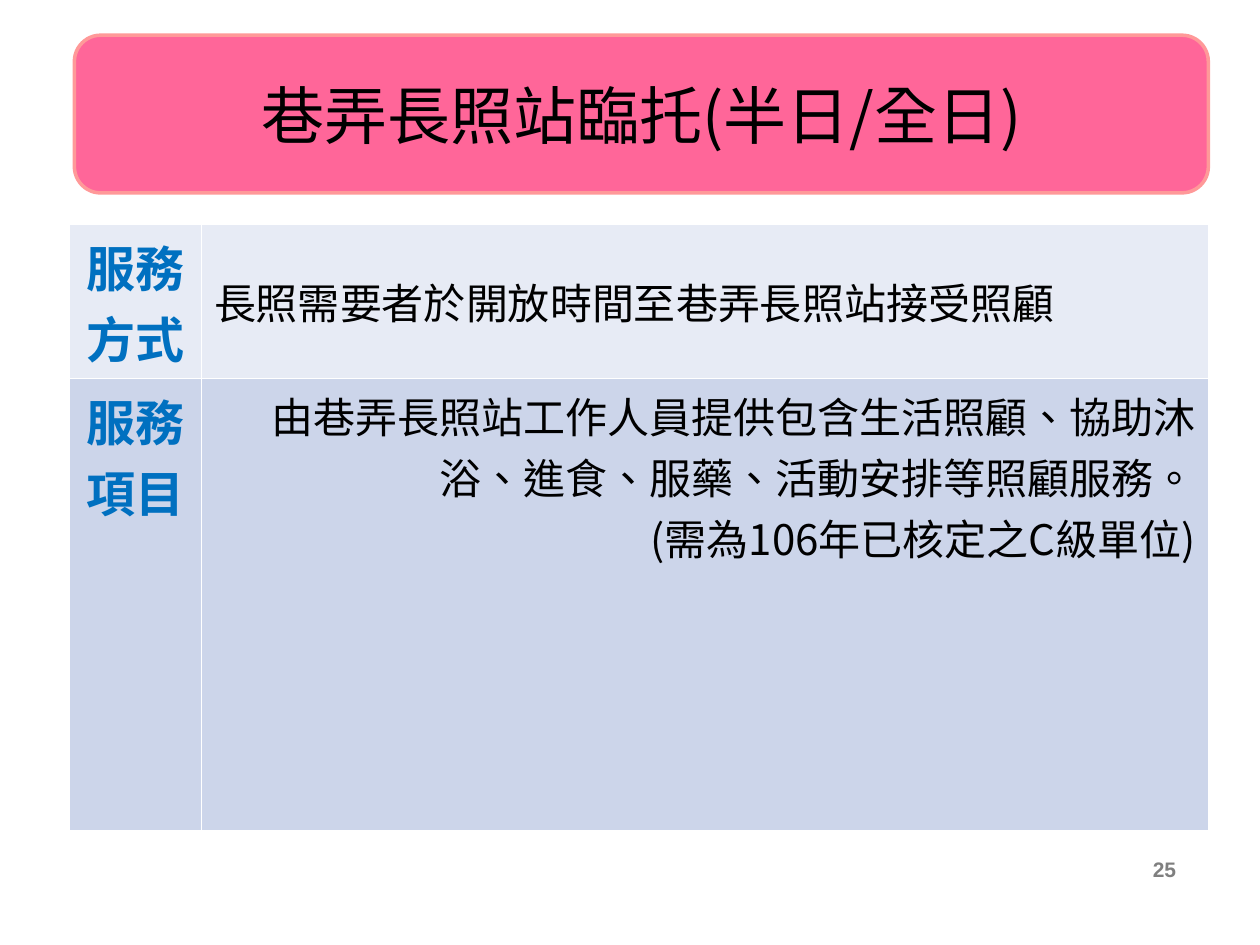
import pptx
import pptx.util
import pptx.dml.color
import pptx.enum.shapes
import pptx.enum.text
import pptx.oxml
import pptx.oxml.ns

Cm, Pt = pptx.util.Cm, pptx.util.Pt
ALIGN = pptx.enum.text.PP_ALIGN
ANCHOR = pptx.enum.text.MSO_ANCHOR
NS = pptx.oxml.ns.nsdecls("a")
CJK = "Noto Sans CJK SC"

# Content
TITLE = "巷弄長照站臨托(半日/全日)"
ROWS = [
    (["服務", "方式"], ["長照需要者於開放時間至巷弄長照站接受照顧"]),
    (["服務", "項目"], [
        "由巷弄長照站工作人員提供包含生活照顧、協助沐浴、進食、服藥、活動安排等照顧服務。",
        "(需為106年已核定之C級單位)"]),
]
NUMBER = "25"

# Formats and sizes (cm)
HEAD = {"size": Pt(36), "bold": False, "name": CJK}
LABEL = {"size": Pt(28), "bold": True, "name": CJK}
BODY = {"size": Pt(24), "bold": False, "name": CJK}
PAGE = {"size": Pt(12), "bold": True, "name": "Arial"}
BANNER = [Cm(n) for n in (1.5, 0.71, 22.86, 3.18)]
FILLS = ["E7EBF5", "CCD5EA"]
COLS = [2.66, 20.3]
HIGH = [2.69, 9.12]
ASIDE = [ALIGN.LEFT, ALIGN.RIGHT]
MIDDLE = [ANCHOR.MIDDLE, ANCHOR.TOP]


def color(target, code):
    target.rgb = pptx.dml.color.RGBColor.from_string(code)


def paint(fill, code):
    fill.solid()
    color(fill.fore_color, code)


def write(frame, lines, form, code, align):
    for i, line in enumerate(lines):
        para = frame.add_paragraph() if i else frame.paragraphs[0]
        para.alignment = align
        # Keep punctuation inside the text area
        para._p.get_or_add_pPr().set("hangingPunct", "0")
        run = para.add_run()
        run.text = line
        for key, value in form.items():
            setattr(run.font, key, value)
        color(run.font.color, code)
        props = run.font._element
        props.set("lang", "zh-TW")
        props.append(pptx.oxml.parse_xml(
            f'<a:ea {NS} typeface="{form["name"]}"/>'))


def border(cell):
    props = cell._tc.get_or_add_tcPr()
    for i, side in enumerate(("lnL", "lnR", "lnT", "lnB")):
        props.insert(i, pptx.oxml.parse_xml(
            f'<a:{side} {NS} w="12700"><a:solidFill>'
            f'<a:srgbClr val="FFFFFF"/></a:solidFill></a:{side}>'))


deck = pptx.Presentation()
deck.slide_width, deck.slide_height = Cm(25.4), Cm(19.05)
slide = deck.slides.add_slide(deck.slide_layouts[5])

# Rounded banner, placed behind the title
banner = slide.shapes.add_shape(
    pptx.enum.shapes.MSO_SHAPE.ROUNDED_RECTANGLE, *BANNER)
banner.shadow.inherit = False
paint(banner.fill, "FF6699")
paint(banner.line.fill, "FF9999")
banner.line.width = Pt(2)
title = slide.shapes.title
title._element.addprevious(banner._element)

# Title
title.left, title.top, title.width, title.height = BANNER
title.text_frame.vertical_anchor = ANCHOR.MIDDLE
write(title.text_frame, [TITLE], HEAD, "000000", ALIGN.CENTER)

# Service table
table = slide.shapes.add_table(
    len(ROWS), len(COLS), Cm(1.4), Cm(4.52), Cm(sum(COLS)), Cm(sum(HIGH))).table
table.first_row = table.horz_banding = False
for col, wide in zip(table.columns, COLS):
    col.width = Cm(wide)
for r, (label, body) in enumerate(ROWS):
    table.rows[r].height = Cm(HIGH[r])
    left, right = table.cell(r, 0), table.cell(r, 1)
    for cell in (left, right):
        paint(cell.fill, FILLS[r])
        border(cell)
    write(left.text_frame, label, LABEL, "0070C0", ALIGN.CENTER)
    write(right.text_frame, body, BODY, "000000", ASIDE[r])
    right.vertical_anchor = MIDDLE[r]

# Slide number
box = slide.shapes.add_textbox(Cm(23.11), Cm(16.92), Cm(2.2), Cm(1.22))
frame = box.text_frame
frame.word_wrap = True
frame.vertical_anchor = ANCHOR.MIDDLE
frame.margin_left = frame.margin_right = Cm(0.13)
write(frame, [NUMBER], PAGE, "7F7F7F", ALIGN.LEFT)

deck.save("out.pptx")
